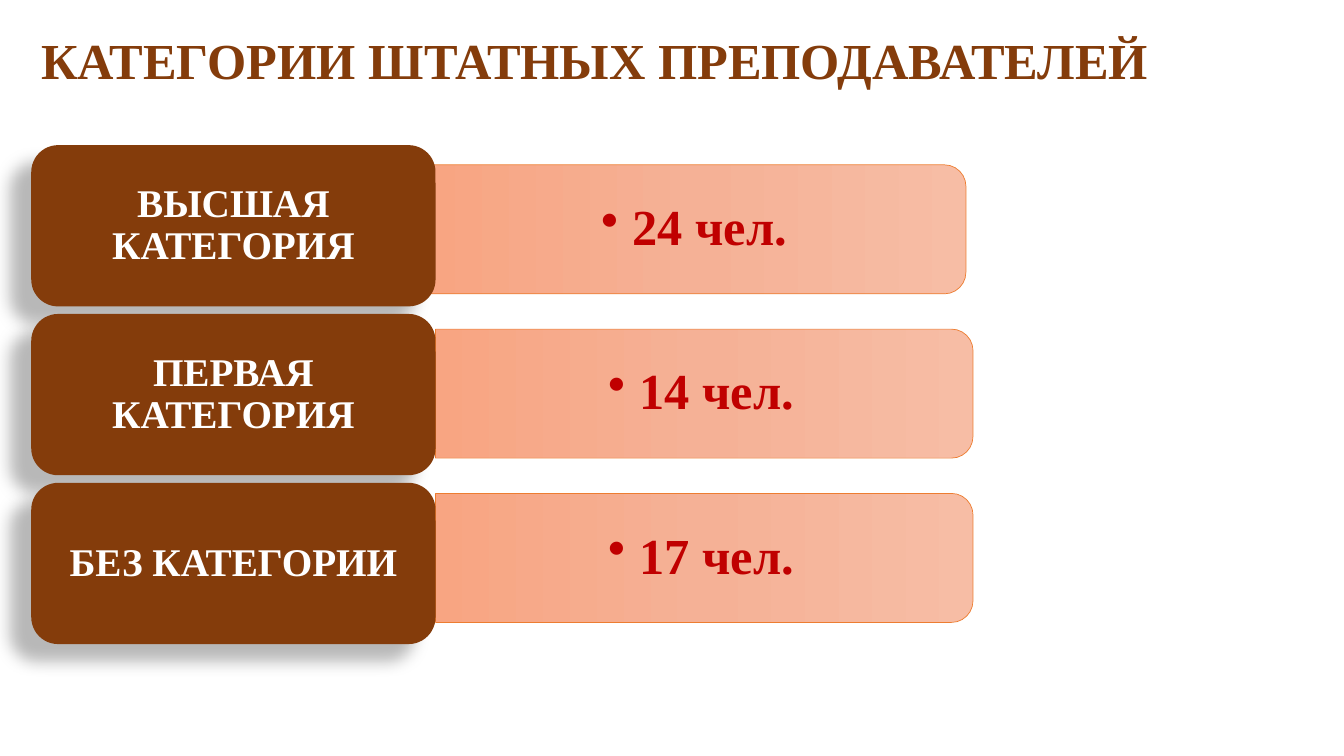
from copy import deepcopy
from dataclasses import dataclass

from lxml import etree
from pptx import Presentation
from pptx.dml.color import RGBColor
from pptx.enum.shapes import MSO_SHAPE
from pptx.enum.text import MSO_ANCHOR, PP_ALIGN
from pptx.oxml.ns import qn
from pptx.shapes.autoshape import Shape
from pptx.slide import Slide
from pptx.text.text import TextFrame
from pptx.util import Inches, Pt

ROUNDED = MSO_SHAPE.ROUNDED_RECTANGLE
ROUNDED_TOP = MSO_SHAPE.ROUND_2_SAME_RECTANGLE
MIDDLE = MSO_ANCHOR.MIDDLE
LEFT, CENTER = PP_ALIGN.LEFT, PP_ALIGN.CENTER

FONT = "Times New Roman"
BROWN = RGBColor(0x84, 0x3C, 0x0B)
RED = RGBColor(0xC0, 0x00, 0x00)
WHITE = RGBColor(0xFF, 0xFF, 0xFF)
ORANGE = RGBColor(0xED, 0x7D, 0x31)
BAR_COLORS = (
    RGBColor(0xF7, 0xBD, 0xA5),
    RGBColor(0xF5, 0xB1, 0x96),
    RGBColor(0xF8, 0xA5, 0x82),
)

LABEL_LEFT, LABEL_TOP, LABEL_STEP = 0.31, 1.44, 1.675
LABEL_WIDTH, LABEL_HEIGHT = 4.01, 1.6
BAR_TOP, BAR_STEP = 1.635, 1.63
BAR_LENGTH, BAR_THICKNESS = 5.33, 1.28
COUNT_WIDTH, COUNT_HEIGHT = 5.27, 1.15


@dataclass(frozen=True)
class Category:
    label: str
    count: str
    bar_left: float


CATEGORIES = (
    Category("ВЫСШАЯ КАТЕГОРИЯ", "24 чел.", 4.25),
    Category("ПЕРВАЯ КАТЕГОРИЯ", "14 чел.", 4.32),
    Category("БЕЗ КАТЕГОРИИ", "17 чел.", 4.32),
)


def write_text(frame: TextFrame, text: str, size: int, color: RGBColor,
               align: PP_ALIGN, margins: tuple[float, float] = (0.1, 0.05),
               bullet: bool = False) -> None:
    frame.word_wrap = True
    frame.vertical_anchor = MIDDLE
    frame.margin_left = frame.margin_right = Inches(margins[0])
    frame.margin_top = frame.margin_bottom = Inches(margins[1])
    para = frame.paragraphs[0]
    para.text = text
    para.alignment = align
    para.line_spacing = 0.9
    para.space_before = Pt(0)
    if bullet:
        properties = para._p.get_or_add_pPr()
        properties.set("marL", str(Inches(0.31)))
        properties.set("indent", str(Inches(-0.31)))
        etree.SubElement(properties, qn("a:buChar"), char="•")
    para.font.name = FONT
    para.font.size = Pt(size)
    para.font.bold = True
    para.font.color.rgb = color


def fill_gradient(shape: Shape) -> None:
    """Fill with the three bar colours, running from top to bottom."""
    shape.fill.gradient()
    shape.fill.gradient_angle = 270
    stop_list = shape._element.spPr.find(qn("a:gradFill")).find(qn("a:gsLst"))
    stop_list.insert(1, deepcopy(stop_list[0]))
    for index, stop in enumerate(shape.fill.gradient_stops):
        stop.position = index / 2
        stop.color.rgb = BAR_COLORS[index]


def cast_shadow(shape: Shape) -> None:
    effects = shape._element.spPr.find(qn("a:effectLst"))
    shadow = etree.SubElement(
        effects, qn("a:outerShdw"), blurRad=str(Pt(11.8)), dist=str(Pt(19.7)),
        dir=str(141 * 60000), algn="ctr", rotWithShape="0")
    color = etree.SubElement(shadow, qn("a:srgbClr"), val="000000")
    etree.SubElement(color, qn("a:alpha"), val="28000")


def add_bar(page: Slide, left: float, top: float) -> None:
    """Draw an upright shape turned a quarter so its round end points right."""
    shift = (BAR_LENGTH - BAR_THICKNESS) / 2
    bar = page.shapes.add_shape(
        ROUNDED_TOP, Inches(left + shift), Inches(top - shift),
        Inches(BAR_THICKNESS), Inches(BAR_LENGTH))
    bar.rotation = 90
    bar.shadow.inherit = False
    fill_gradient(bar)
    bar.line.color.rgb = ORANGE
    bar.line.width = Pt(0.5)


def add_count(page: Slide, left: float, top: float, text: str) -> None:
    box = page.shapes.add_textbox(
        Inches(left), Inches(top), Inches(COUNT_WIDTH), Inches(COUNT_HEIGHT))
    write_text(box.text_frame, text, 36, RED, CENTER, (0.27, 0.14), bullet=True)


def add_label(page: Slide, top: float, text: str) -> None:
    label = page.shapes.add_shape(
        ROUNDED, Inches(LABEL_LEFT), Inches(top),
        Inches(LABEL_WIDTH), Inches(LABEL_HEIGHT))
    label.shadow.inherit = False
    cast_shadow(label)
    label.fill.solid()
    label.fill.fore_color.rgb = BROWN
    label.line.fill.background()
    write_text(label.text_frame, text, 28, WHITE, CENTER, (0.12, 0.06))


def add_title(page: Slide) -> None:
    title = page.shapes.title
    title.left, title.top = Inches(0.31), Inches(0)
    title.width, title.height = Inches(12), Inches(1.25)
    write_text(title.text_frame, "КАТЕГОРИИ ШТАТНЫХ ПРЕПОДАВАТЕЛЕЙ", 36, BROWN, LEFT)


def main() -> None:
    deck = Presentation()
    deck.slide_width, deck.slide_height = Inches(13.33), Inches(7.5)
    page = deck.slides.add_slide(deck.slide_layouts.get_by_name("Title Only"))
    add_title(page)
    for row, category in enumerate(CATEGORIES):
        bar_top = BAR_TOP + row * BAR_STEP
        add_bar(page, category.bar_left, bar_top)
        count_top = bar_top + (BAR_THICKNESS - COUNT_HEIGHT) / 2
        add_count(page, category.bar_left, count_top, category.count)
        add_label(page, LABEL_TOP + row * LABEL_STEP, category.label)
    deck.save("out.pptx")


if __name__ == "__main__":
    main()
